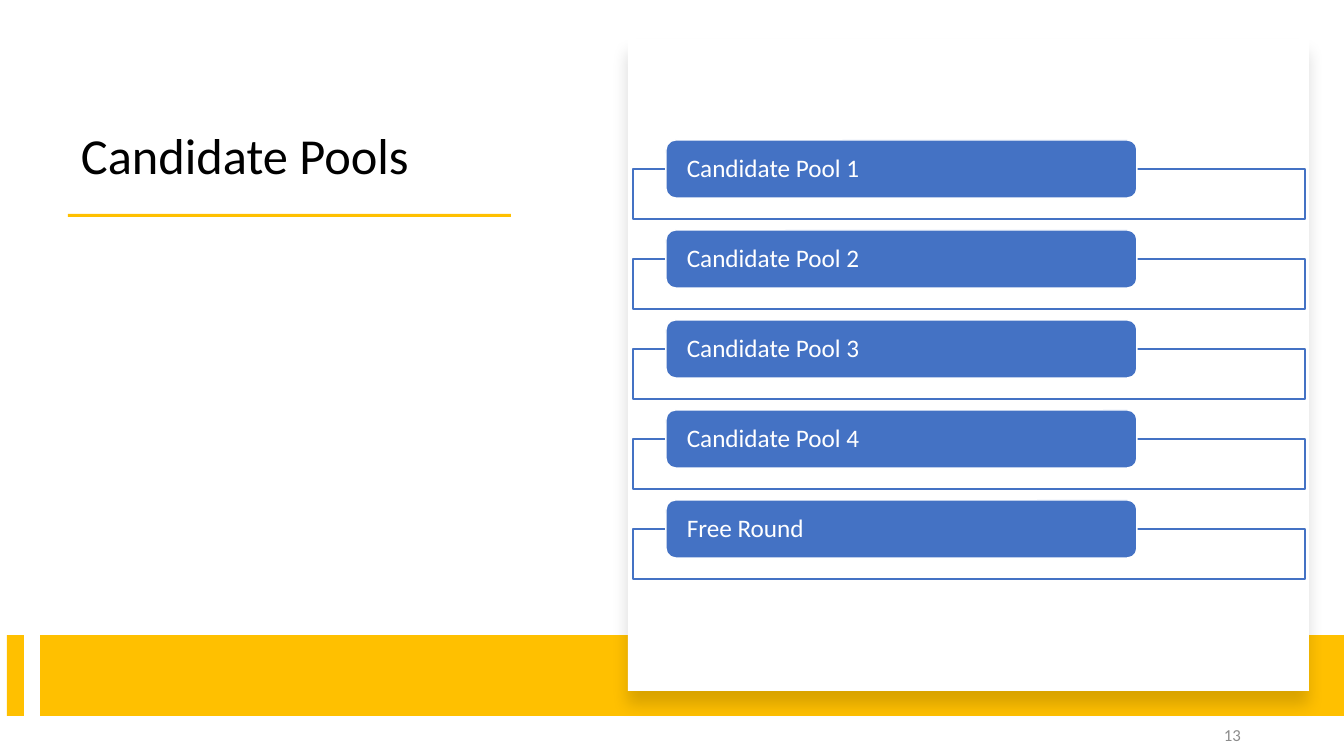
"""Builds the Candidate Pools slide: a title at left and a panel of five labelled boxes."""
import dataclasses

import lxml.etree
import pptx
import pptx.dml.color
import pptx.enum.shapes
import pptx.enum.text
import pptx.oxml
import pptx.oxml.ns
import pptx.util

PX = 914400 / 100.8
SHAPES = pptx.enum.shapes.MSO_SHAPE
ALIGN = pptx.enum.text.PP_ALIGN
ANCHOR = pptx.enum.text.MSO_ANCHOR


@dataclasses.dataclass(frozen=True)
class Theme:
    font: str = "Calibri"
    black: str = "000000"
    white: str = "FFFFFF"
    gold: str = "FFC000"
    blue: str = "4472C4"
    gray: str = "8C8C8C"
    title_size: int = 36
    label_size: int = 18
    number_size: int = 12


theme = Theme()
deck = pptx.Presentation()
deck.slide_width, deck.slide_height = round(1344 * PX), round(756 * PX)
page = deck.slides.add_slide(deck.slide_layouts[6])


def add_box(kind, left, top, width, height, fill, line=None):
    """Add a filled preset shape, placed in px, with an optional outline."""
    box = page.shapes.add_shape(kind, *(round(n * PX) for n in (left, top, width, height)))
    box.shadow.inherit = False
    box.fill.solid()
    box.fill.fore_color.rgb = pptx.dml.color.RGBColor.from_string(fill)
    if line:
        box.line.color.rgb = pptx.dml.color.RGBColor.from_string(line)
        box.line.width = pptx.util.Pt(1)
    else:
        box.line.fill.background()
    return box


def write(box, text, size, color, anchor, align=ALIGN.LEFT, inset=10):
    """Put one styled paragraph into a shape or text box."""
    frame = box.text_frame
    frame.text = text
    frame.word_wrap = True
    frame.vertical_anchor = anchor
    frame.margin_left = frame.margin_right = round(inset * PX)
    para = frame.paragraphs[0]
    para.alignment = align
    para.line_spacing = 0.9
    span = para.runs[0]
    span.font.name = theme.font
    span.font.size = pptx.util.Pt(size)
    span.font.color.rgb = pptx.dml.color.RGBColor.from_string(color)


title = page.shapes.add_textbox(*(round(n * PX) for n in (71, 58, 472, 132)))
write(title, "Candidate Pools", theme.title_size, theme.black, ANCHOR.BOTTOM)

for left, top, width, height in ((68, 214, 443, 3), (7, 635, 17, 81), (40, 635, 1304, 81)):
    add_box(SHAPES.RECTANGLE, left, top, width, height, theme.gold)

panel = add_box(SHAPES.RECTANGLE, 628, 39, 681, 652, theme.white)
effects = panel._element.spPr.find(pptx.oxml.ns.qn("a:effectLst"))
effects.append(pptx.oxml.parse_xml(
    f'<a:outerShdw {pptx.oxml.ns.nsdecls("a")} blurRad="139700" dist="127000" dir="5400000" '
    f'algn="t" rotWithShape="0"><a:srgbClr val="{theme.black}"><a:alpha val="15000"/>'
    '</a:srgbClr></a:outerShdw>'))

number = page.shapes.add_textbox(*(round(n * PX) for n in (949, 716, 302, 40)))
write(number, "13", theme.number_size, theme.gray, ANCHOR.MIDDLE, ALIGN.RIGHT)

pools = ("Candidate Pool 1", "Candidate Pool 2", "Candidate Pool 3", "Candidate Pool 4", "Free Round")
for row, pool in enumerate(pools):
    top = 140 + 90 * row
    frame_box = add_box(SHAPES.RECTANGLE, 633, top + 29, 672, 50, theme.white, theme.blue)
    tint = frame_box._element.spPr.find(".//" + pptx.oxml.ns.qn("a:srgbClr"))
    lxml.etree.SubElement(tint, pptx.oxml.ns.qn("a:alpha"), val="90000")
    label = add_box(SHAPES.ROUNDED_RECTANGLE, 666, top, 471, 58, theme.blue, theme.white)
    write(label, pool, theme.label_size, theme.white, ANCHOR.MIDDLE, inset=18)

deck.save("out.pptx")
